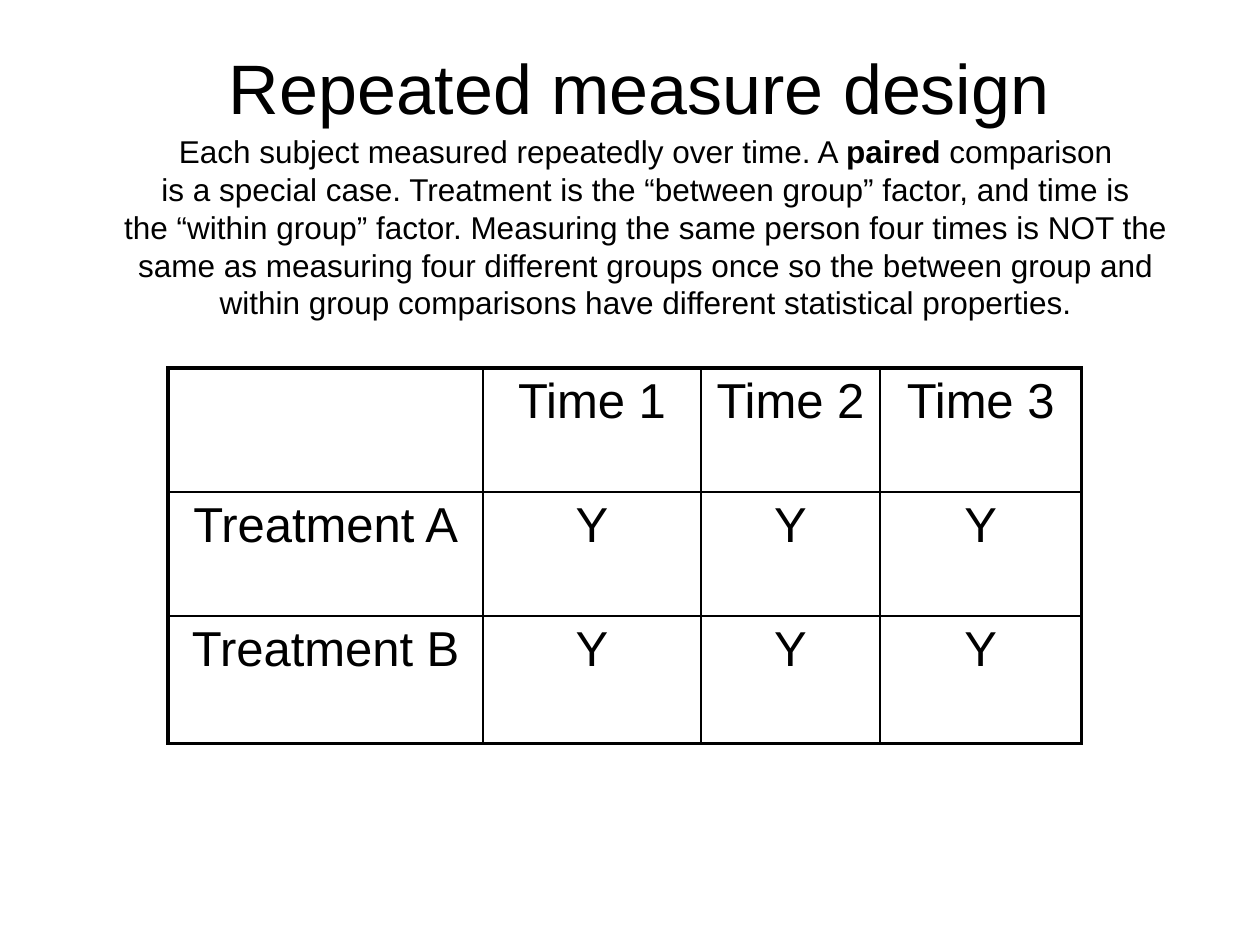
"""Build a slide that explains repeated measure design with a treatment by time table."""
from lxml import etree
from pptx import Presentation, util as u
from pptx.dml.color import RGBColor
from pptx.enum import text
from pptx.oxml import ns

FONT, BLACK = "Arial", "000000"
THIN, THICK = 1, 2.25
TITLE = "Repeated measure design"
INTRO = [
    [("Each subject measured repeatedly over time. A ", False), ("paired", True), (" comparison", False)],
    [("is a special case. Treatment is the “between group” factor, and time is", False)],
    [("the “within group” factor. Measuring the same person four times is NOT the same as "
      "measuring four different groups once so the between group and within group "
      "comparisons have different statistical properties.", False)],
]
DESIGN = [
    ["", "Time 1", "Time 2", "Time 3"],
    ["Treatment A", "Y", "Y", "Y"],
    ["Treatment B", "Y", "Y", "Y"],
]
COL_WIDTHS = [6.35, 4.39, 3.61, 4.06]
ROW_HEIGHTS = [2.5, 2.5, 2.57]


def style(p, size):
    p.alignment = text.PP_ALIGN.CENTER
    p.font.name, p.font.size = FONT, u.Pt(size)
    p.font.color.rgb = RGBColor.from_string(BLACK)


def border(cell, side, width):
    ln = etree.SubElement(cell._tc.get_or_add_tcPr(), ns.qn(f"a:ln{side}"), w=str(u.Pt(width)))
    fill = etree.SubElement(ln, ns.qn("a:solidFill"))
    etree.SubElement(fill, ns.qn("a:srgbClr"), val=BLACK)


def add_title(s):
    sp = s.shapes.title
    sp.left, sp.top, sp.width, sp.height = u.Cm(1.45), u.Cm(0.76), u.Cm(22.86), u.Cm(1.98)
    tf = sp.text_frame
    tf.text = TITLE
    tf.vertical_anchor = text.MSO_ANCHOR.MIDDLE
    style(tf.paragraphs[0], 40)


def add_intro(s):
    tf = s.shapes.add_textbox(u.Cm(1.9), u.Cm(2.54), u.Cm(22.23), u.Cm(4.11)).text_frame
    tf.word_wrap = True
    for i, runs in enumerate(INTRO):
        p = tf.add_paragraph() if i else tf.paragraphs[0]
        style(p, 18)
        for words, bold in runs:
            r = p.add_run()
            r.text = words
            if bold:
                r.font.bold = True


def add_design(s):
    rows, cols = len(DESIGN), len(DESIGN[0])
    table = s.shapes.add_table(rows, cols, u.Cm(3.39), u.Cm(7.42),
                               u.Cm(sum(COL_WIDTHS)), u.Cm(sum(ROW_HEIGHTS))).table
    table.first_row = table.horz_banding = False
    for col, width in zip(table.columns, COL_WIDTHS):
        col.width = u.Cm(width)
    for row, height in zip(table.rows, ROW_HEIGHTS):
        row.height = u.Cm(height)
    for i, labels in enumerate(DESIGN):
        for j, label in enumerate(labels):
            cell = table.cell(i, j)
            outer = {"L": j == 0, "R": j == cols - 1, "T": i == 0, "B": i == rows - 1}
            for side, is_outer in outer.items():
                border(cell, side, THICK if is_outer else THIN)
            cell.fill.background()
            cell.text = label
            style(cell.text_frame.paragraphs[0], 28)


def main():
    prs = Presentation()
    prs.slide_width, prs.slide_height = u.Cm(25.4), u.Cm(19.05)
    s = prs.slides.add_slide(prs.slide_layouts[5])
    add_title(s)
    add_design(s)
    add_intro(s)
    prs.save("out.pptx")


if __name__ == "__main__":
    main()
